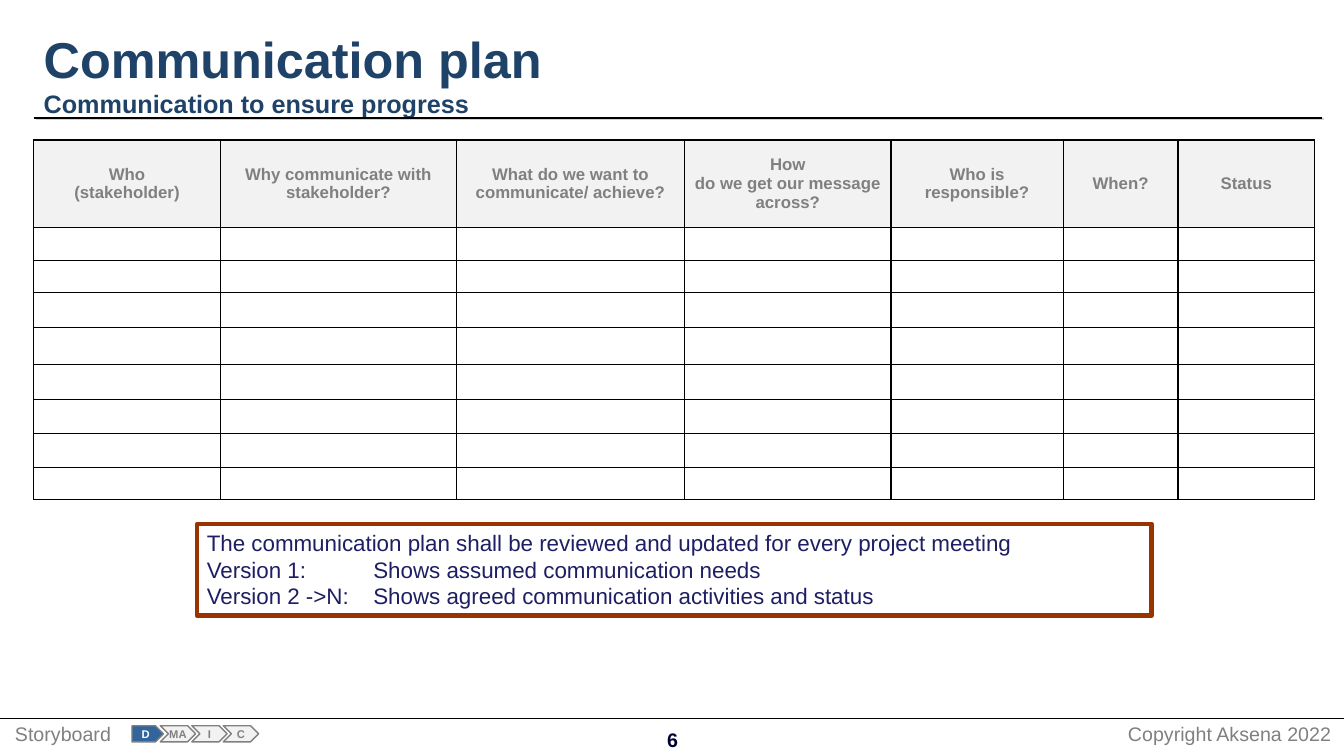
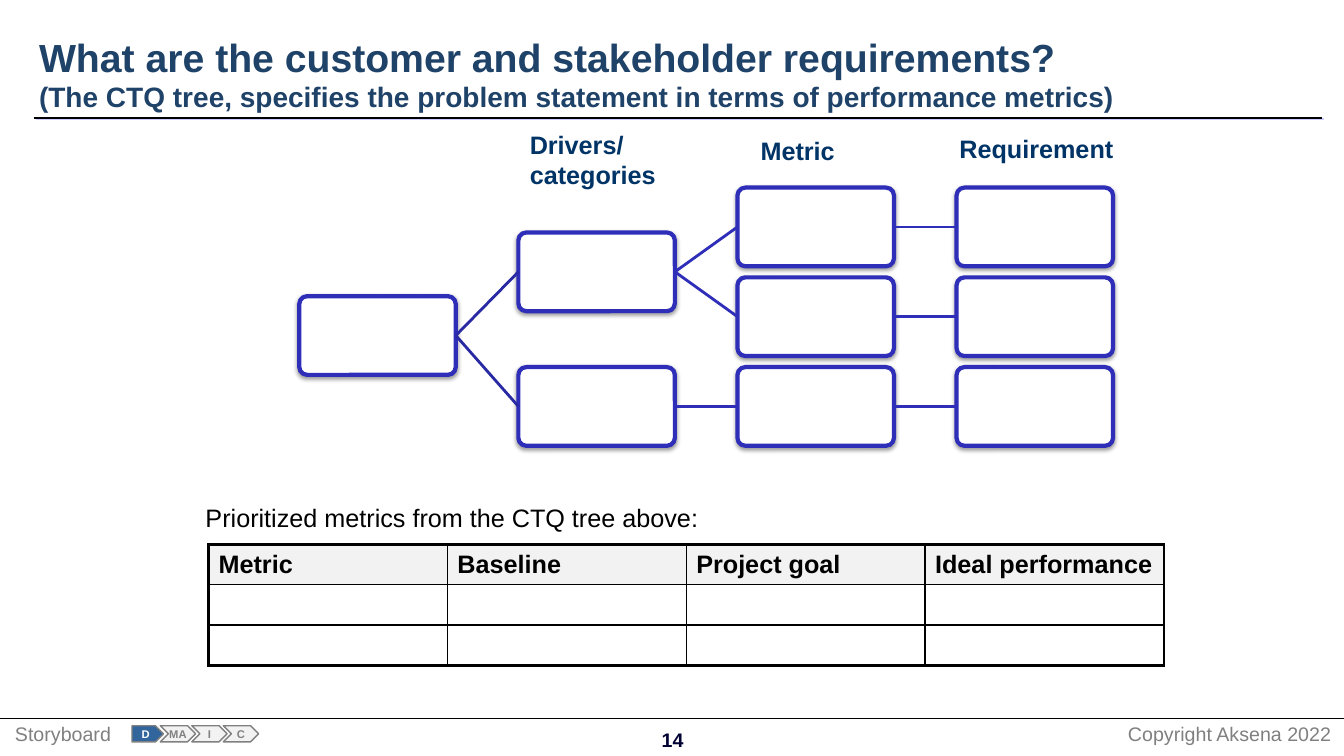
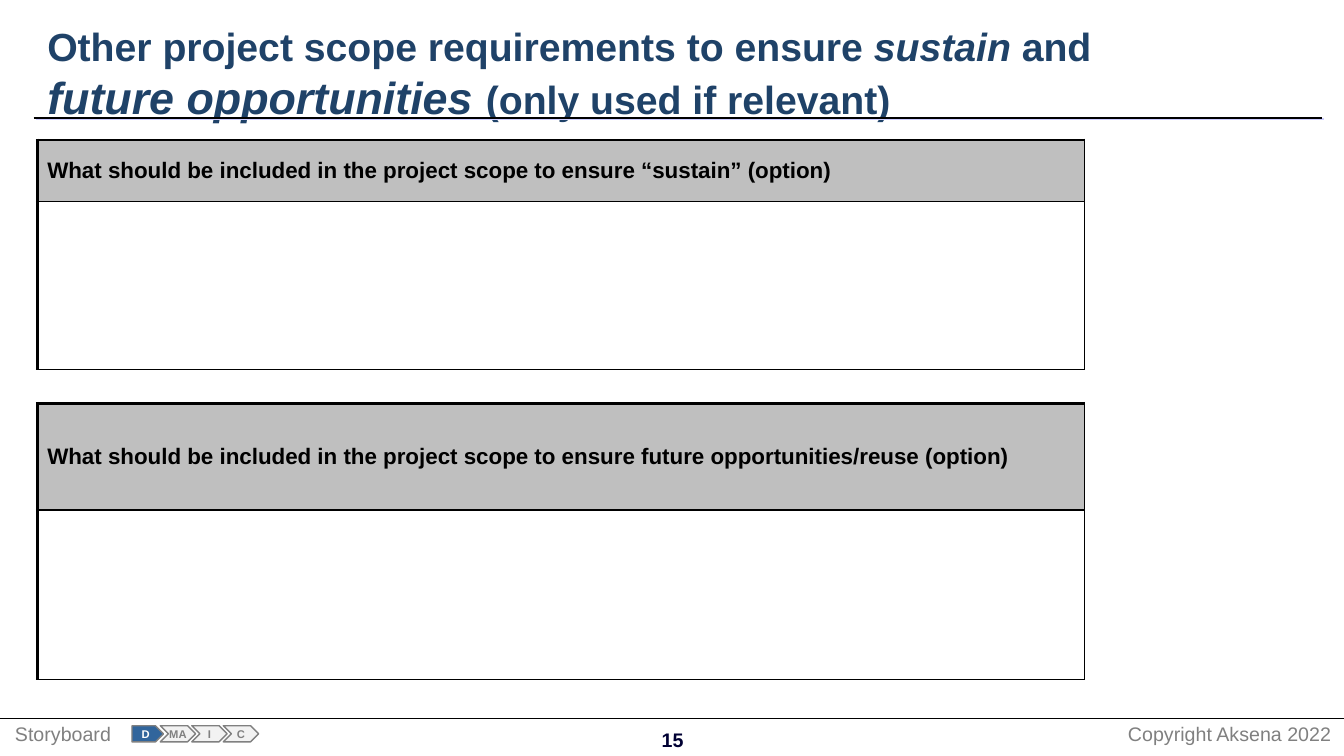
from itertools import product

from lxml import etree
from pptx import Presentation
from pptx.dml.color import RGBColor
from pptx.enum import shapes, text
from pptx.oxml.ns import qn
from pptx.util import Pt

NAVY = RGBColor(0x1F, 0x42, 0x68)
INDIGO = RGBColor(0x1E, 0x1E, 0x64)
LABEL = RGBColor(0x00, 0x33, 0x66)
NUMBER = RGBColor(0x00, 0x00, 0x33)
BLUE = RGBColor(0x2E, 0x2E, 0xB9)
DEEP = RGBColor(0x29, 0x29, 0xA3)
STEEL = RGBColor(0x31, 0x65, 0x9C)
LILAC = RGBColor(0xCC, 0xCC, 0xFF)
RUST = RGBColor(0x99, 0x33, 0x00)
BLACK = RGBColor(0x00, 0x00, 0x00)
GRAY = RGBColor(0x80, 0x80, 0x80)
SILVER = RGBColor(0xBF, 0xBF, 0xBF)
PALE = RGBColor(0xF2, 0xF2, 0xF2)
WHITE = RGBColor(0xFF, 0xFF, 0xFF)

FONT = "Arial"
WIDE, HIGH = 960, 540
LEFT, CENTER, RIGHT = (text.PP_ALIGN.LEFT, text.PP_ALIGN.CENTER,
                       text.PP_ALIGN.RIGHT)
TOP, MIDDLE = text.MSO_ANCHOR.TOP, text.MSO_ANCHOR.MIDDLE
KIND = shapes.MSO_SHAPE


def shade(props, color=None, alpha=100, blur=0, dist=0, angle=0):
    """Set the shadow of a shape or run; without a colour, clear it."""
    effects = props.find(qn("a:effectLst"))
    if effects is None:
        effects = etree.SubElement(props, qn("a:effectLst"))
    if color is not None:
        outer = etree.SubElement(
            effects, qn("a:outerShdw"), blurRad=str(Pt(blur)),
            dist=str(Pt(dist)), dir=str(angle * 60000), algn="ctr",
            rotWithShape="0")
        tone = etree.SubElement(outer, qn("a:srgbClr"), val=str(color))
        etree.SubElement(tone, qn("a:alpha"), val=str(alpha * 1000))


def write(frame, paras, size=18, color=BLACK, bold=False, align=LEFT,
          anchor=TOP, wrap=True, inset=None, tab=None, glow=None):
    """Fill a frame; a paragraph is a string or a list of (text, format)."""
    frame.word_wrap = wrap
    frame.auto_size = text.MSO_AUTO_SIZE.NONE
    frame.vertical_anchor = anchor
    if inset is not None:
        frame.margin_left = frame.margin_right = Pt(inset)
        frame.margin_top = frame.margin_bottom = Pt(inset)
    for i, runs in enumerate(paras):
        para = frame.add_paragraph() if i else frame.paragraphs[0]
        para.alignment = align
        if tab:
            stops = etree.SubElement(para._p.get_or_add_pPr(), qn("a:tabLst"))
            etree.SubElement(stops, qn("a:tab"), pos=str(Pt(tab)), algn="l")
        for words, style in [(runs, {})] if isinstance(runs, str) else runs:
            points = style.get("size", size)
            for j, part in enumerate(words.split("\n")):
                if j:
                    para.add_line_break()
                    etree.SubElement(para._p[-1], qn("a:rPr"),
                                     sz=str(points * 100))
                if not part:
                    continue
                run = para.add_run()
                run.text = part
                run.font.size = Pt(points)
                run.font.bold = bold
                run.font.italic = style.get("italic", False)
                run.font.color.rgb = color
                if glow:
                    shade(run._r.get_or_add_rPr(), **glow)
                run.font.name = FONT


class Deck:
    """Holds the shared style and the current slide."""

    glow = dict(color=LILAC, dist=2.2, angle=27)
    drop = dict(color=BLACK, alpha=38, blur=3.1, dist=1.6, angle=90)

    def __init__(self):
        self.show = Presentation()
        self.show.slide_width, self.show.slide_height = Pt(WIDE), Pt(HIGH)
        self.slide = None

    def start(self, number, title, box, size):
        """Open a slide with its title, rules and footer."""
        self.slide = self.show.slides.add_slide(self.show.slide_layouts[5])
        self.line((24, 84.2), (944, 84.2), width=1.5, shadow=self.glow)
        self.line((WIDE, 513.2), (0, 513.2), width=0.75)
        head = self.slide.shapes.title
        head.left, head.top, head.width, head.height = map(Pt, box)
        write(head.text_frame, [title], size=size, color=NAVY, bold=True,
              anchor=MIDDLE, glow=self.glow)
        # Footer
        self.label(441.4, 516.2, 78, 24.5, [str(number)], size=14,
                   color=NUMBER, bold=True, align=CENTER)
        self.label(758, 512, 200, 24.5, ["Copyright Aksena 2022"], size=14,
                   color=GRAY, align=RIGHT)
        self.label(3.6, 512, 90, 24.5, ["Storyboard"], size=14, color=GRAY)
        self.phases()

    def phases(self):
        """Phase arrows of the footer, the first one active."""
        group = self.slide.shapes.add_group_shape()
        for i, name in enumerate(["D", "MA", "I", "C"]):
            kind, left, width, fill, color = (
                (KIND.CHEVRON, 92 + 22.5 * i, 25.2, PALE, GRAY) if i else
                (KIND.PENTAGON, 94.3, 22.5, STEEL, WHITE))
            step = self.shape(kind, left, 518.4, width, 11.5, fill, GRAY, 1,
                              group)
            write(step.text_frame, [name], size=8, color=color, bold=True,
                  align=CENTER, anchor=MIDDLE, wrap=False, inset=0)

    def line(self, start, end, color=BLACK, width=1.0, shadow=None):
        link = self.slide.shapes.add_connector(
            shapes.MSO_CONNECTOR.STRAIGHT, *map(Pt, start + end))
        link.line.color.rgb = color
        link.line.width = Pt(width)
        shade(link._element.spPr, **(shadow or {}))
        return link

    def join(self, first, last, color):
        """Link the right side of one box to the left side of another."""
        link = self.line((0, 0), (0, 0), color, 2)
        link.begin_connect(first, 3)
        link.end_connect(last, 1)

    def shape(self, kind, left, top, width, height, fill, edge, weight,
              group=None):
        item = (group or self.slide).shapes.add_shape(
            kind, Pt(left), Pt(top), Pt(width), Pt(height))
        item.shadow.inherit = False
        item.fill.solid()
        item.fill.fore_color.rgb = fill
        item.line.color.rgb = edge
        item.line.width = Pt(weight)
        return item

    def node(self, left, top, width, height):
        """Empty rounded box of a tree."""
        item = self.shape(KIND.ROUNDED_RECTANGLE, left, top, width, height,
                          WHITE, BLUE, 3)
        item.adjustments[0] = 0.1
        shade(item._element.spPr, **self.drop)
        return item

    def label(self, left, top, width, height, paras, **style):
        box = self.slide.shapes.add_textbox(Pt(left), Pt(top), Pt(width),
                                            Pt(height))
        write(box.text_frame, paras, **style)

    def table(self, left, top, cols, rows, heads, fill, thick="", **style):
        """Grid with a header row; thick names the heavy outer sides."""
        grid = self.slide.shapes.add_table(
            len(rows), len(cols), Pt(left), Pt(top), Pt(sum(cols)),
            Pt(sum(rows))).table
        grid.first_row = grid.horz_banding = False
        for col, width in zip(grid.columns, cols):
            col.width = Pt(width)
        for row, height in zip(grid.rows, rows):
            row.height = Pt(height)
        for r, c in product(range(len(rows)), range(len(cols))):
            cell = grid.cell(r, c)
            outer = {"L": c == 0, "R": c == len(cols) - 1,
                     "T": r == 0, "B": r == len(rows) - 1}
            props = cell._tc.get_or_add_tcPr()
            for side, edge in outer.items():
                weight = 2.25 if edge and side in thick else 1
                rule = etree.SubElement(props, qn("a:ln" + side),
                                        w=str(Pt(weight)))
                paint = etree.SubElement(rule, qn("a:solidFill"))
                etree.SubElement(paint, qn("a:srgbClr"), val=str(BLACK))
            cell.fill.solid()
            cell.fill.fore_color.rgb = WHITE if r else fill
            if r:
                # A small end mark keeps empty rows at their set height
                etree.SubElement(cell.text_frame.paragraphs[0]._p,
                                 qn("a:endParaRPr"), sz="1000")
            else:
                write(cell.text_frame, heads[c], bold=True, **style)
                cell.vertical_anchor = MIDDLE


def plan(deck):
    deck.start(6, [("Communication plan\n", {}),
                   ("Communication to ensure progress", {"size": 18})],
               (24, 21.6, 872, 61.2), 36)
    heads = [["Who", "(stakeholder)"], ["Why communicate with stakeholder?"],
             ["What do we want to communicate/ achieve?"],
             ["How", "do we get our message across?"],
             ["Who is", "responsible?"], ["When?"], ["Status"]]
    deck.table(24, 100, [133.5, 168.5, 163, 147.5, 123, 82, 97.5],
               [62.3, 23.5, 23, 25, 26.4, 25, 24.3, 24.3, 23], heads, PALE,
               size=12, color=GRAY, align=CENTER)
    note = deck.shape(KIND.RECTANGLE, 140.6, 374.2, 682, 65.5, WHITE, RUST, 3)
    write(note.text_frame,
          ["The communication plan shall be reviewed and updated for every "
           "project meeting",
           "Version 1:\tShows assumed communication needs",
           "Version 2 ->N:\tShows agreed communication activities and status"],
          size=16, color=INDIGO, tab=119)


def tree(deck):
    deck.start(14, [("What are the customer and stakeholder requirements?\n",
                     {}),
                    ("(The CTQ tree, specifies the problem statement in terms "
                     "of performance metrics)", {"size": 20})],
               (20.7, 21, 811, 62.6), 28)
    # Tree boxes by column, each at its row position
    levels = [[1.21], [0.5, 2], [0, 1, 2], [0, 1, 2]]
    nodes = [[deck.node(213.8 + 156.5 * c, 134 + 64.1 * r, 111.8, 56.2)
              for r in rows] for c, rows in enumerate(levels)]
    root, drivers, metrics, needs = nodes
    for driver in drivers:
        deck.join(root[0], driver, DEEP)
    pairs = list(zip([drivers[0], drivers[0], drivers[1]], metrics))
    for first, last in pairs + list(zip(metrics, needs)):
        deck.join(first, last, BLUE)
    # Column labels
    for left, top, paras in [(371.3, 88.6, ["Drivers/", "categories"]),
                             (536.2, 92.9, ["Metric"]),
                             (678.2, 91.8, ["Requirement"])]:
        deck.label(left, top, 135, 29 * len(paras), paras, color=LABEL,
                   bold=True)
    # Prioritized metrics
    deck.label(139.7, 355, 400, 29,
               ["Prioritized metrics from the CTQ tree above:"])
    deck.table(149, 388.8, [170.6] * 4, [28.8] * 3,
               [["Metric"], ["Baseline"], ["Project goal"],
                ["Ideal performance"]], PALE, thick="LRTB")


def scope(deck):
    deck.start(15, [("Other project scope requirements to ensure ", {}),
                    ("sustain", {"italic": True}), (" and\n", {}),
                    ("future opportunities ", {"size": 32, "italic": True}),
                    ("(only used if relevant)", {})],
               (26.6, 21.6, 814, 61.2), 28)
    for top, rows, goal in [(100, [44, 120.2], "“sustain”"),
                            (288, [76.3, 121], "future opportunities/reuse")]:
        deck.table(26.6, top, [748], rows,
                   [["What should be included in the project scope to ensure "
                     f"{goal} (option)"]], SILVER, thick="LT", size=16)


def main():
    deck = Deck()
    for build in (plan, tree, scope):
        build(deck)
    deck.show.save("out.pptx")


if __name__ == "__main__":
    main()
